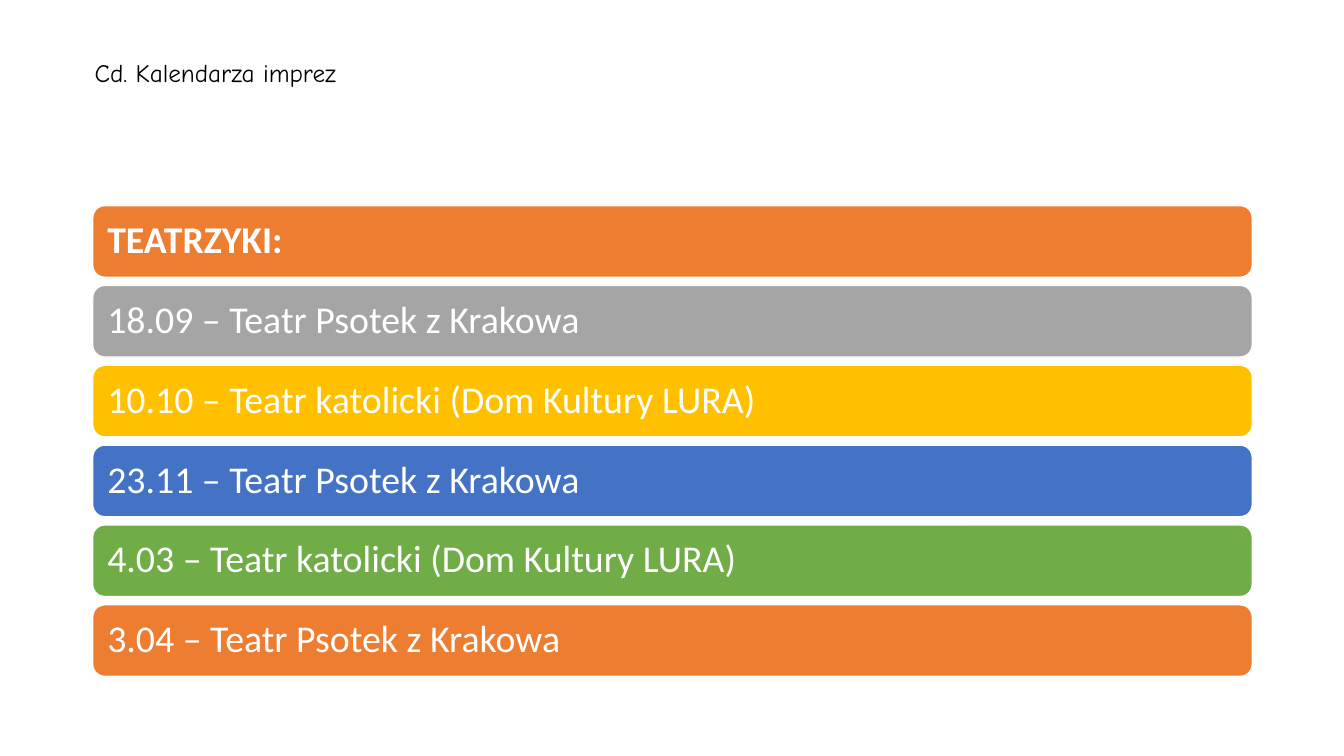
from dataclasses import dataclass
from pptx import Presentation
from pptx.dml.color import RGBColor
from pptx.enum.shapes import MSO_SHAPE
from pptx.enum.text import MSO_ANCHOR, PP_ALIGN
from pptx.util import Inches, Pt


@dataclass(frozen=True)
class Theme:
    white: str = "FFFFFF"
    black: str = "000000"
    bars: tuple = ("ED7D31", "A5A5A5", "FFC000", "4472C4", "70AD47")
    head: str = "Comic Neue"
    body: str = "Calibri"
    small: int = 18
    large: int = 27


@dataclass(frozen=True)
class Grid:
    left: float = 0.92
    top: float = 2.04
    width: float = 11.5
    bar: float = 0.71
    last: float = 6.0

    def row(self, num, count):
        pitch = (self.last - self.top) / (count - 1)
        return self.left, self.top + num * pitch, self.width, self.bar


THEME = Theme()
GRID = Grid()
TITLE = "Cd. Kalendarza imprez"
EVENTS = (
    "TEATRZYKI:",
    "18.09 – Teatr Psotek z Krakowa",
    "10.10 – Teatr katolicki (Dom Kultury LURA)",
    "23.11 – Teatr Psotek z Krakowa",
    "4.03 – Teatr katolicki (Dom Kultury LURA)",
    "3.04 – Teatr Psotek z Krakowa",
)


def paint(color):
    return RGBColor.from_string(color)


def write(shape, text, face, size, color, inset, bold=False):
    frame = shape.text_frame
    frame.text = text
    frame.word_wrap = True
    frame.vertical_anchor = MSO_ANCHOR.MIDDLE
    frame.margin_left = frame.margin_right = Inches(inset)
    para = frame.paragraphs[0]
    para.alignment = PP_ALIGN.LEFT
    para.line_spacing = 0.9
    font = para.runs[0].font
    font.name = face
    font.size = Pt(size)
    font.bold = bold
    font.color.rgb = paint(color)


def add_title(slide, text):
    box = slide.shapes.add_textbox(*map(Inches, (0.84, 0.4, 11.58, 0.67)))
    write(box, text, THEME.head, THEME.small, THEME.black, 0.1)


def add_bar(slide, num, text):
    area = map(Inches, GRID.row(num, len(EVENTS)))
    bar = slide.shapes.add_shape(MSO_SHAPE.ROUNDED_RECTANGLE, *area)
    bar.shadow.inherit = False
    bar.fill.solid()
    bar.fill.fore_color.rgb = paint(THEME.bars[num % len(THEME.bars)])
    bar.line.color.rgb = paint(THEME.white)
    bar.line.width = Pt(1)
    write(bar, text, THEME.body, THEME.large, THEME.white, 0.11, num == 0)


def main():
    deck = Presentation()
    deck.slide_width = Inches(13.33)
    deck.slide_height = Inches(7.5)
    slide = deck.slides.add_slide(deck.slide_layouts[6])
    add_title(slide, TITLE)
    for num, text in enumerate(EVENTS):
        add_bar(slide, num, text)
    deck.save("out.pptx")


if __name__ == "__main__":
    main()
